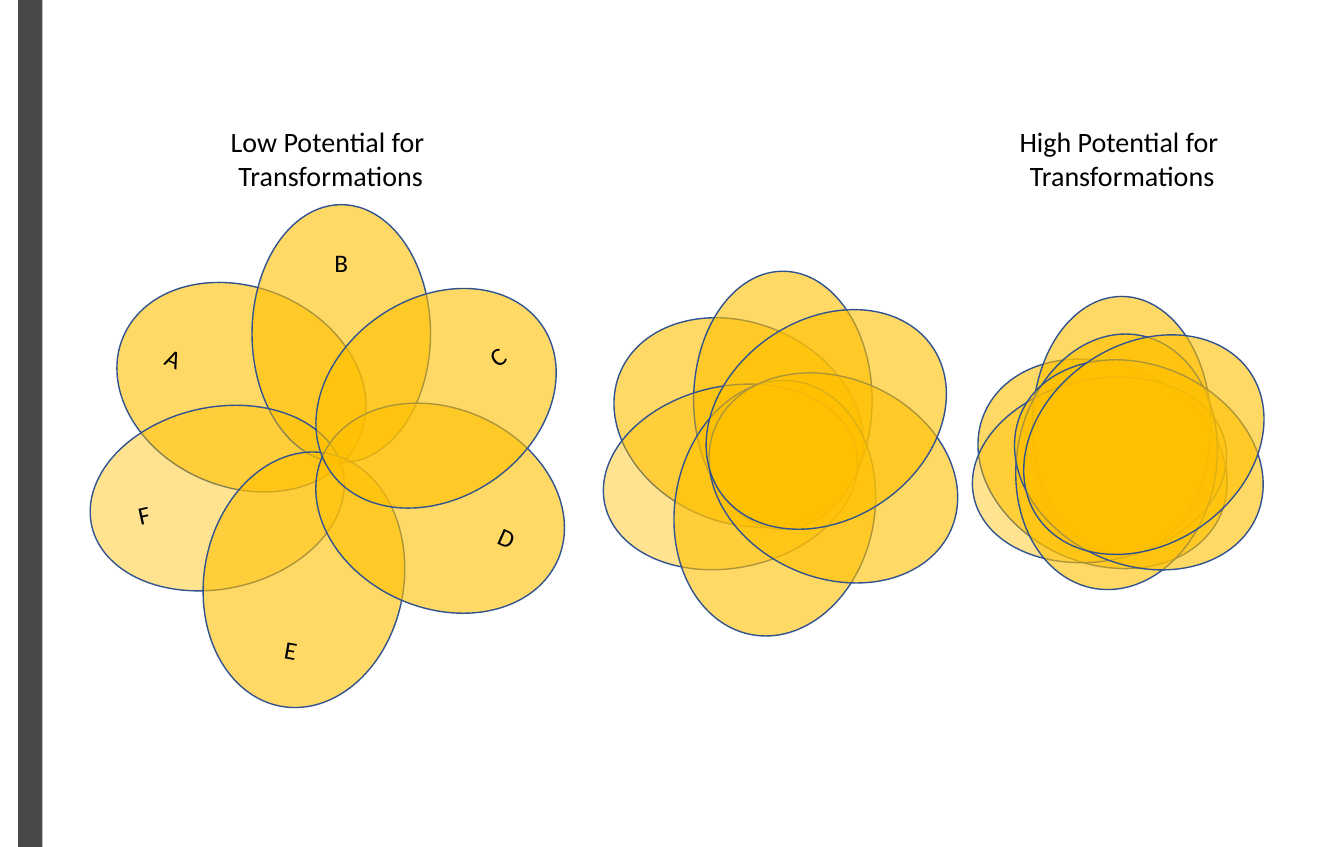
from lxml import etree
from pptx import Presentation
from pptx.dml.color import RGBColor
from pptx.enum.shapes import MSO_SHAPE
from pptx.enum.text import MSO_ANCHOR, PP_ALIGN
from pptx.oxml.ns import qn
from pptx.util import Inches, Pt

FONT = "Calibri"
BLACK, GOLD, BLUE, GREY = "000000", "FFC000", "31538F", "474847"

# Petals from back to front: width, height, rotation, opacity in percent
PETALS = {
    "A": (2.55, 1.98, 23.1, 60),
    "B": (1.77, 2.56, 0, 60),
    "F": (2.55, 1.8, 347.7, 43),
    "E": (2.55, 1.98, 280.2, 60),
    "D": (2.55, 1.98, 23.8, 60),
    "C": (2.55, 1.98, 325.6, 60),
}

# Left and top of each petal, in the order of PETALS
SPREAD = [(1.12, 2.85), (2.5, 2.03), (0.88, 4.04),
          (1.74, 4.76), (3.09, 4.05), (3.05, 2.96)]
CLOSER = [(6.05, 3.2), (6.88, 2.69), (5.97, 3.83),
          (6.41, 4.05), (6.99, 3.75), (6.92, 3.17)]
MERGED = [(9.66, 3.61), (10.24, 2.94), (9.63, 3.76),
          (9.8, 3.59), (10.02, 3.62), (10.07, 3.42)]

# Alignment and anchor of the letters written inside their petals
LETTERS = {
    "A": (PP_ALIGN.LEFT, MSO_ANCHOR.MIDDLE),
    "B": (PP_ALIGN.CENTER, MSO_ANCHOR.TOP),
    "F": (PP_ALIGN.LEFT, MSO_ANCHOR.MIDDLE),
    "D": (PP_ALIGN.RIGHT, MSO_ANCHOR.MIDDLE),
    "C": (PP_ALIGN.RIGHT, MSO_ANCHOR.MIDDLE),
}


def color(hex_value):
    return RGBColor.from_string(hex_value)


def write_text(shape, text, size, align, anchor):
    frame = shape.text_frame
    frame.word_wrap = True
    frame.vertical_anchor = anchor
    frame.text = text
    for paragraph in frame.paragraphs:
        paragraph.alignment = align
        paragraph.font.name = FONT
        paragraph.font.size = Pt(size)
        paragraph.font.color.rgb = color(BLACK)


def add_filled(slide, kind, box, fill):
    shape = slide.shapes.add_shape(kind, *map(Inches, box))
    shape.shadow.inherit = False
    shape.fill.solid()
    shape.fill.fore_color.rgb = color(fill)
    return shape


def add_petal(slide, left, top, width, height, rotation, opacity):
    petal = add_filled(slide, MSO_SHAPE.OVAL, (left, top, width, height), GOLD)
    petal.rotation = rotation
    petal.line.color.rgb = color(BLUE)
    petal.line.width = Pt(1)
    fill_color = petal.fill._xPr.find(qn("a:solidFill"))[0]
    etree.SubElement(fill_color, qn("a:alpha"), val=str(opacity * 1000))
    return petal


def add_label(slide, text, box, size, anchor=MSO_ANCHOR.TOP):
    label = slide.shapes.add_textbox(*map(Inches, box))
    write_text(label, text, size, PP_ALIGN.CENTER, anchor)
    return label


def add_flower(slide, positions, lettered=False):
    for (letter, petal_form), (left, top) in zip(PETALS.items(), positions):
        petal = add_petal(slide, left, top, *petal_form)
        if not lettered:
            continue
        if letter in LETTERS:
            write_text(petal, letter, 18, *LETTERS[letter])
        else:
            # This petal lies on its side, so its letter has its own box
            label = add_label(slide, letter, (2.31, 4.85, 1.4, 1.8), 18,
                              MSO_ANCHOR.BOTTOM)
            label.rotation = 10.2


def main():
    presentation = Presentation()
    presentation.slide_width = Inches(13.33)
    presentation.slide_height = Inches(8.4)
    slide = presentation.slides.add_slide(presentation.slide_layouts[6])

    # Side bar
    bar = add_filled(slide, MSO_SHAPE.RECTANGLE, (0.18, 0, 0.24, 8.4), GREY)
    bar.line.fill.background()

    # Three flowers with growing overlap
    add_flower(slide, SPREAD, lettered=True)
    add_flower(slide, CLOSER)
    add_flower(slide, MERGED)

    # Headings
    add_label(slide, "Low Potential for \nTransformations",
              (2.18, 1.19, 2.2, 0.77), 20)
    add_label(slide, "High Potential for \nTransformations",
              (10, 1.19, 2.26, 0.77), 20)

    presentation.save("out.pptx")


if __name__ == "__main__":
    main()
